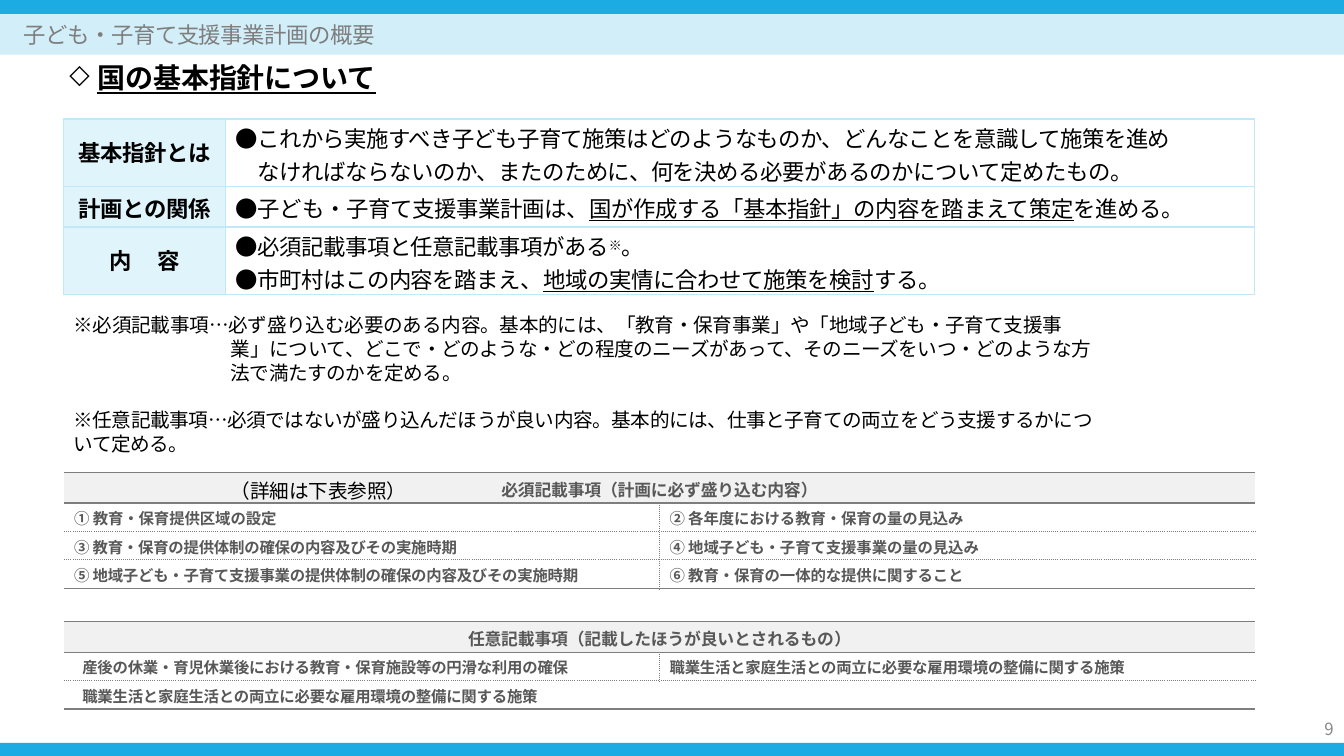
from lxml import etree
from pptx import Presentation
from pptx.dml.color import RGBColor
from pptx.enum.shapes import MSO_SHAPE
from pptx.enum.text import MSO_ANCHOR, MSO_AUTO_SIZE, PP_ALIGN
from pptx.oxml.ns import qn
from pptx.util import Pt

RECTANGLE = MSO_SHAPE.RECTANGLE
TOP, MIDDLE = MSO_ANCHOR.TOP, MSO_ANCHOR.MIDDLE
LEFT, CENTER = PP_ALIGN.LEFT, PP_ALIGN.CENTER
NO_AUTOFIT = MSO_AUTO_SIZE.NONE
PLAIN_TABLE = "{2D5ABB26-0587-4C30-8999-92F81FD0307C}"


class Theme:
    bar, band, label, grid = "1CACE3", "D2EEF9", "DFF4FB", "C0E8F8"
    header, rule, item = "F1F1F1", "7E7E7E", "585858"
    title, text, number = "7E7E7E", "000000", "888888"
    font, title_font, asian_font = "Roboto", "Calibri", "Noto Sans CJK JP"
    heading_size, body_size, note_size = 20, 16, 14
    header_size, item_size, number_size = 12, 11, 12


# Content: a run is (text, letter spacing, optional overrides)
TITLE = [("子ども・子育て支援事業計画の概要", -0.3)]
HEADING = [("国の基本指針について", -0.1, {"underline": True})]
NUMBER = [("9", -0.5)]

# Guideline rows: height, label, label inset, text inset, paragraphs
GUIDELINES = [
    (45.4, [("基本指針とは", -0.3)], 11.8, 2.2, [
        [("●これから実施すべき子ども子育て施策はどのようなものか、どんなことを意識して施策を進めなければ", -0.4),
         ("ならないのか、またのために、何を決める必要があるのかについて定めたもの。", -0.3)]]),
    (28.8, [("計画との関係", -0.3)], 3.6, 3.6, [
        [("●子ども・子育て支援事業計画は、", -0.2),
         ("国が作成する「基本指針」の内容を踏まえて策定", -0.2, {"underline": True}),
         ("を進める。", -0.3)]]),
    (45.4, [("内\t容", -0.5)], 11.8, 2.2, [
        [("●必須記載事項と任意記載事項がある", -0.3),
         ("※", 0, {"size": 15.8, "baseline": 26}),
         ("。", -0.5)],
        [("●市町村はこの内容を踏まえ、", -0.3),
         ("地域の実情に合わせて施策を検討", -0.2, {"underline": True}),
         ("する。", -0.3)]]),
]

# Notes: left margin, first-line indent, space before, runs
NOTES = [
    (113, -112.3, 0, [
        ("※必須記載事項…必ず盛り込む必要のある内容。基本的には、「教育・保育事業」や「地域子ども・子育て支援事業」について、", -0.2),
        ("どこで・どのような・どの程度のニーズがあって、そのニーズをいつ・どのような方法で満たすのかを定める。", -0.3)]),
    (0.7, 0, 16.8, [
        ("※任意記載事項…必須ではないが盛り込んだほうが良い内容。基本的には、仕事と子育ての両立をどう支援するかについて定める。", -0.3)]),
    (113, 0, 16.8, [("（", 0), ("詳細は下表参照", -0.1), ("）", -0.5)]),
]

# Item tables: top, header, first-column indent, rows of (text, letter spacing)
ITEM_TABLES = [
    (337.7, "必須記載事項（計画に必ず盛り込む内容", 7.2, [
        [("① 教育・保育提供区域の設定", -0.1), ("② 各年度における教育・保育の量の見込み", -0.1)],
        [("③ 教育・保育の提供体制の確保の内容及びその実施時期", -0.2),
         ("④ 地域子ども・子育て支援事業の量の見込み", -0.1)],
        [("⑤ 地域子ども・子育て支援事業の提供体制の確保の内容及びその実施時期", -0.2),
         ("⑥ 教育・保育の一体的な提供に関すること", -0.1)]]),
    (444.2, "任意記載事項（記載したほうが良いとされるもの", 13, [
        [("産後の休業・育児休業後における教育・保育施設等の円滑な利用の確保", -0.2),
         ("職業生活と家庭生活との両立に必要な雇用環境の整備に関する施策", -0.2)],
        [("職業生活と家庭生活との両立に必要な雇用環境の整備に関する施策", -0.2)]]),
]


def color(value):
    return RGBColor.from_string(value)


def add_runs(para, runs, size, ink, bold=False, font=Theme.font):
    for text, spacing, *extra in runs:
        options = extra[0] if extra else {}
        span = para.add_run()
        span.text = text
        span.font.name, span.font.bold = font, bold
        span.font.size = Pt(options.get("size", size))
        span.font.color.rgb = color(ink)
        span.font.underline = options.get("underline", False)
        props = span.font._element
        props.set("lang", "ja-JP")
        props.set("spc", str(round(spacing * 100)))
        if "baseline" in options:
            props.set("baseline", str(options["baseline"] * 1000))
        asian = etree.Element(qn("a:ea"), typeface=Theme.asian_font)
        props.find(qn("a:latin")).addnext(asian)


def indent(para, left, first=0):
    props = para._p.get_or_add_pPr()
    props.set("marL", str(Pt(left)))
    props.set("indent", str(Pt(first)))
    return props


def add_tab(props, position):
    tabs = etree.SubElement(props, qn("a:tabLst"))
    etree.SubElement(tabs, qn("a:tab"), pos=str(Pt(position)), algn="l")


def set_frame(frame, anchor=TOP, right=0):
    frame.word_wrap, frame.auto_size = True, NO_AUTOFIT
    frame.vertical_anchor = anchor
    frame.margin_left = frame.margin_top = frame.margin_bottom = 0
    frame.margin_right = Pt(right)
    return frame


def add_text_box(page, left, top, width, height, right=0):
    box = page.shapes.add_textbox(Pt(left), Pt(top), Pt(width), Pt(height))
    return set_frame(box.text_frame, right=right)


def add_band(page, top, height, fill):
    band = page.shapes.add_shape(RECTANGLE, 0, Pt(top), Pt(960), Pt(height))
    band.shadow.inherit = False
    band.fill.solid()
    band.fill.fore_color.rgb = color(fill)
    band.line.fill.background()


def add_plain_table(page, top, left, widths, heights):
    frame = page.shapes.add_table(len(heights), len(widths), Pt(left), Pt(top),
                                  Pt(sum(widths)), Pt(sum(heights)))
    table = frame.table
    table.first_row = table.horz_banding = False
    table._tbl.tblPr.find(qn("a:tableStyleId")).text = PLAIN_TABLE
    for column, width in zip(table.columns, widths):
        column.width = Pt(width)
    for row, height in zip(table.rows, heights):
        row.height = Pt(height)
    return table


def format_cell(cell, inset, borders, fill=None, right=0):
    """Borders map the side L, R, T or B to (colour, dash)."""
    cell.margin_left = cell.margin_bottom = 0
    cell.margin_top, cell.margin_right = Pt(inset), Pt(right)
    props = cell._tc.get_or_add_tcPr()
    for side in "LRTB":
        if side in borders:
            ink, dash = borders[side]
            line = etree.SubElement(props, qn("a:ln" + side), w=str(Pt(1)))
            solid = etree.SubElement(line, qn("a:solidFill"))
            etree.SubElement(solid, qn("a:srgbClr"), val=ink)
            etree.SubElement(line, qn("a:prstDash"), val=dash)
    if fill:
        cell.fill.solid()
        cell.fill.fore_color.rgb = color(fill)
    else:
        cell.fill.background()


def add_guideline_table(page):
    table = add_plain_table(page, 85, 45.4, [115.9, 734.8], [row[0] for row in GUIDELINES])
    borders = dict.fromkeys("LRTB", (Theme.grid, "solid"))
    for index, (_, label, label_inset, text_inset, paragraphs) in enumerate(GUIDELINES):
        name, body = table.cell(index, 0), table.cell(index, 1)
        format_cell(name, label_inset, borders, Theme.label)
        para = name.text_frame.paragraphs[0]
        para.alignment = CENTER
        if "\t" in label[0][0]:
            add_tab(para._p.get_or_add_pPr(), 34)
        add_runs(para, label, Theme.body_size, Theme.text, True)
        hanging = index == 0
        format_cell(body, text_inset, borders, right=54 if hanging else 0)
        for order, runs in enumerate(paragraphs):
            para = body.text_frame.paragraphs[0] if order == 0 else body.text_frame.add_paragraph()
            indent(para, *((23, -15.8) if hanging else (7.2, 0)))
            add_runs(para, runs, Theme.body_size, Theme.text)


def add_item_table(page, top, header, first_indent, rows):
    table = add_plain_table(page, top, 45.8, [425.3] * 2, [21.6] + [20.3] * len(rows))
    solid, dotted = (Theme.rule, "solid"), (Theme.rule, "sysDot")
    lines = [[(header, -0.1), ("）", -0.5)]] + [None] * len(rows)
    for r in range(len(lines)):
        merged = r == 0 or len(rows[r - 1]) == 1
        for c in range(2):
            borders = {"T": solid if r <= 1 else dotted,
                       "B": solid if r in (0, len(rows)) else dotted}
            if not merged:
                borders["RL"[c]] = dotted
            format_cell(table.cell(r, c), 2.7, borders, None if r else Theme.header)
        if merged:
            table.cell(r, 0).merge(table.cell(r, 1))
        if r == 0:
            para = table.cell(0, 0).text_frame.paragraphs[0]
            para.alignment = CENTER
            add_runs(para, lines[0], Theme.header_size, Theme.item, True)
            continue
        for c, item in enumerate(rows[r - 1]):
            para = table.cell(r, c).text_frame.paragraphs[0]
            indent(para, 7.2 if c else first_indent)
            add_runs(para, [item], Theme.item_size, Theme.item, True)


def main():
    deck = Presentation()
    deck.slide_width, deck.slide_height = Pt(960), Pt(540)
    page = deck.slides.add_slide(deck.slide_layouts[5])

    # Bars and title band
    add_band(page, 0, 10, Theme.bar)
    add_band(page, 530.6, 9.4, Theme.bar)
    add_band(page, 10, 29, Theme.band)

    # Title, brought in front of its band
    title = page.shapes.title
    title.left, title.top, title.width, title.height = Pt(17), Pt(10), Pt(600), Pt(29)
    title._element.getparent().append(title._element)
    para = set_frame(title.text_frame, MIDDLE).paragraphs[0]
    para.alignment = LEFT
    add_runs(para, TITLE, Theme.body_size, Theme.title, font=Theme.title_font)

    # Heading with diamond bullet
    para = add_text_box(page, 16.6, 43.4, 400, 30).paragraphs[0]
    props = indent(para, 53, -20)
    etree.SubElement(props, qn("a:buSzPct"), val="95000")
    etree.SubElement(props, qn("a:buChar"), char="◇")
    add_runs(para, HEADING, Theme.heading_size, Theme.text, True)

    # Tables
    for item_table in ITEM_TABLES:
        add_item_table(page, *item_table)
    add_guideline_table(page)

    # Notes
    frame = add_text_box(page, 51.8, 223.5, 764, 103, right=32)
    for order, (left, first, before, runs) in enumerate(NOTES):
        para = frame.paragraphs[0] if order == 0 else frame.add_paragraph()
        indent(para, left, first)
        para.space_before, para.line_spacing = Pt(before), Pt(17)
        add_runs(para, runs, Theme.note_size, Theme.text)

    # Page number
    para = add_text_box(page, 943.2, 514, 14, 15).paragraphs[0]
    indent(para, 2.9)
    para.line_spacing = Pt(13.9)
    add_runs(para, NUMBER, Theme.number_size, Theme.number, font=Theme.asian_font)

    deck.save("out.pptx")


if __name__ == "__main__":
    main()
